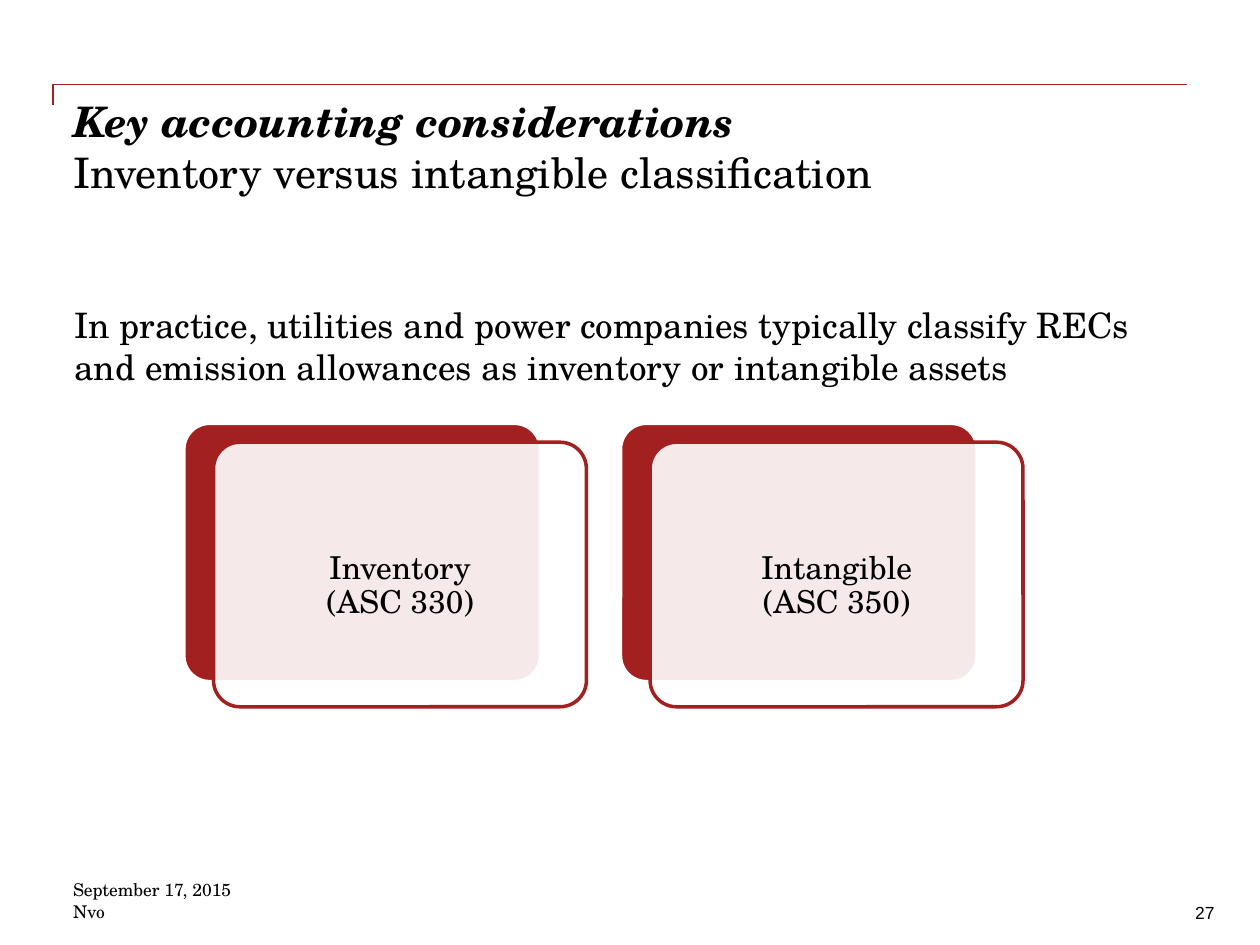
from lxml.etree import SubElement
from pptx import Presentation
from pptx.dml.color import RGBColor
from pptx.enum.shapes import MSO_SHAPE
from pptx.enum.text import MSO_ANCHOR, MSO_AUTO_SIZE, PP_ALIGN
from pptx.oxml.ns import qn
from pptx.util import Inches, Pt

RED = RGBColor(0xA3, 0x20, 0x20)
WHITE = RGBColor(0xFF, 0xFF, 0xFF)
BLACK = RGBColor(0, 0, 0)
SERIF = "TeX Gyre Schola"
SANS = "Arial"

# Card grid: first column and the step to the next
CARD_LEFT, CARD_STEP, CARD_TOP = 1.46, 3.465, 3.36
CARDS = ["Inventory\v(ASC 330)", "Intangible\v(ASC 350)"]


def place(shape, left, top, width, height):
    shape.left, shape.top = Inches(left), Inches(top)
    shape.width, shape.height = Inches(width), Inches(height)


def write(box, lines, size, font=SERIF, align=PP_ALIGN.LEFT,
          anchor=MSO_ANCHOR.TOP, inset=0, after=0, spacing=1.0):
    """Fill a text box or placeholder with one paragraph per line."""
    frame = box.text_frame
    frame.word_wrap = True
    frame.auto_size = MSO_AUTO_SIZE.NONE
    frame.vertical_anchor = anchor
    frame.margin_left = frame.margin_right = Inches(inset)
    frame.margin_top = frame.margin_bottom = Inches(inset)
    frame.text = "\n".join(lines)
    for para in frame.paragraphs:
        para.alignment = align
        para.line_spacing = spacing
        para.space_before, para.space_after = Pt(0), Pt(after)
        for span in para.runs:
            span.font.name, span.font.size = font, Pt(size)
            span.font.color.rgb = BLACK


def add_text(page, at, lines, size, **style):
    box = page.shapes.add_textbox(*(Inches(length) for length in at))
    write(box, lines, size, **style)


def add_panel(page, at, fill, line, opacity=None):
    panel = page.shapes.add_shape(MSO_SHAPE.ROUNDED_RECTANGLE,
                                  *(Inches(length) for length in at))
    panel.adjustments[0] = 0.1
    panel.shadow.inherit = False
    panel.fill.solid()
    panel.fill.fore_color.rgb = fill
    panel.line.color.rgb = line
    panel.line.width = Pt(2)
    if opacity is not None:
        color = panel.fill._xPr.find(qn("a:solidFill")).find(qn("a:srgbClr"))
        SubElement(color, qn("a:alpha"), val=str(opacity * 1000))


def add_card(page, left, top, label):
    """Red panel behind, white panel in front, label on top."""
    add_panel(page, (left, top, 2.83, 2.05), RED, WHITE)
    add_panel(page, (left + 0.235, top + 0.15, 2.96, 2.1), WHITE, RED, opacity=90)
    add_text(page, (left + 0.29, top + 0.31, 2.85, 1.97), [label], 18,
             align=PP_ALIGN.CENTER, anchor=MSO_ANCHOR.MIDDLE,
             inset=0.07, after=6.3, spacing=0.9)


def add_header_rule(page):
    builder = page.shapes.build_freeform(Inches(0.42), Inches(0.83))
    builder.add_line_segments([(Inches(0.42), Inches(0.67)),
                               (Inches(9.42), Inches(0.67))], close=False)
    rule = builder.convert_to_shape()
    rule.shadow.inherit = False
    rule.fill.background()
    rule.line.color.rgb = RED
    rule.line.width = Pt(1)


def add_title(page):
    title = page.shapes.title
    place(title, 0.58, 0.76, 8.83, 1)
    write(title, ["Key accounting considerations\v"
                  "Inventory versus intangible classification"], 24)
    heading, subheading = title.text_frame.paragraphs[0].runs
    heading.font.bold = heading.font.italic = True
    subheading.font.bold = subheading.font.italic = False


def add_statement(page):
    body = page.placeholders[1]
    place(body, 0.59, 2.41, 8.83, 0.71)
    write(body, ["In practice, utilities and power companies typically classify "
                 "RECs and emission allowances as inventory or intangible assets"],
          20, after=9)
    # No bullet and no hanging indent
    properties = body.text_frame.paragraphs[0]._p.get_or_add_pPr()
    properties.set("marL", "0")
    properties.set("indent", "0")
    SubElement(properties, qn("a:buNone"))


def main():
    deck = Presentation()
    deck.slide_width, deck.slide_height = Inches(10), Inches(7.5)
    page = deck.slides.add_slide(deck.slide_layouts[1])

    # Header and statement
    add_header_rule(page)
    add_title(page)
    add_statement(page)

    # Classification cards
    for column, label in enumerate(CARDS):
        add_card(page, CARD_LEFT + column * CARD_STEP, CARD_TOP, label)

    # Footer
    add_text(page, (0.58, 6.98, 2.83, 0.42), ["September 17, 2015", "Nvo"], 10)
    add_text(page, (7.97, 7.16, 1.67, 0.17), ["27"], 10,
             font=SANS, align=PP_ALIGN.RIGHT)

    deck.save("out.pptx")


if __name__ == "__main__":
    main()
